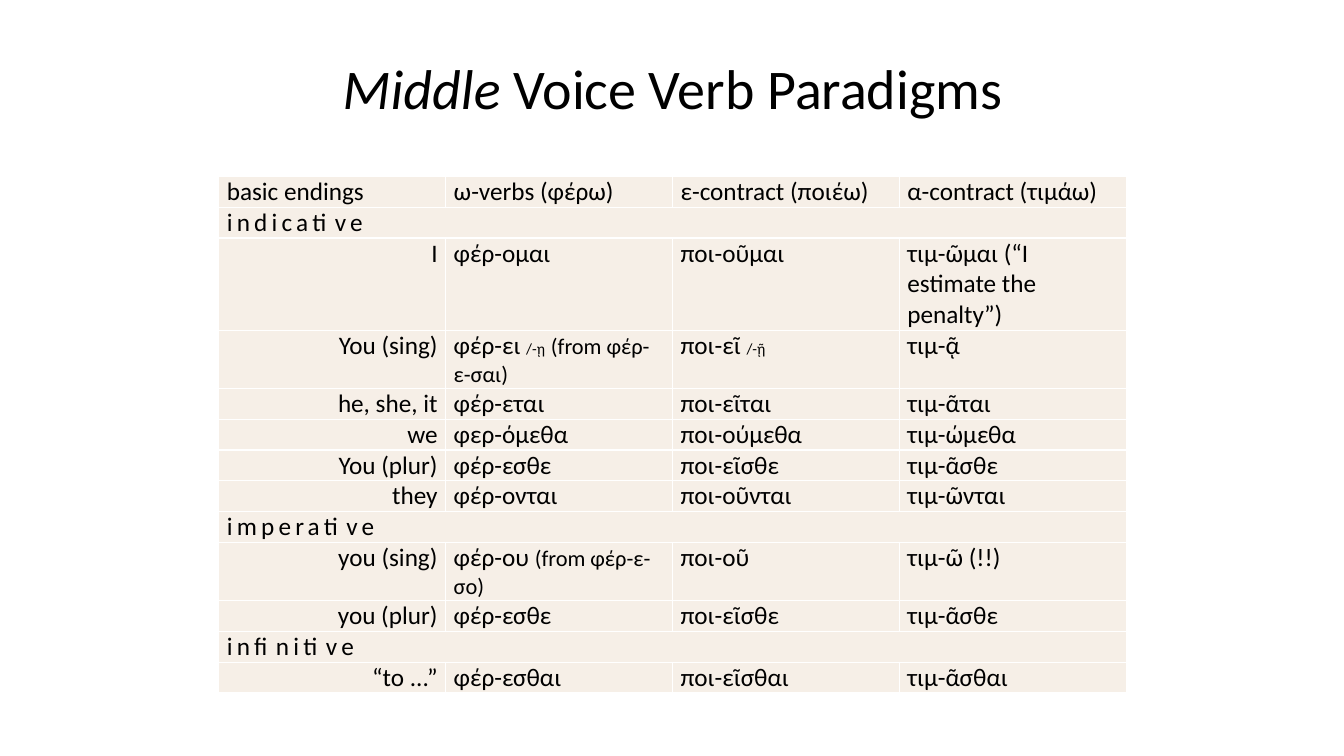
"""Build a slide with a table of Greek middle voice verb paradigms."""
from pptx import Presentation
from pptx.dml.color import RGBColor
from pptx.enum.text import MSO_ANCHOR, MSO_AUTO_SIZE, PP_ALIGN
from pptx.util import Inches, Pt

HUES = {"ink": "000000", "cell": "F6EFE7"}
FONT = "Calibri"
ROWS = [
    ["basic endings", "ω-verbs (φέρω)", "ε-contract (ποιέω)", "α-contract (τιμάω)"],
    ["indicative"],
    ["I", "φέρ-ομαι", "ποι-οῦμαι", "τιμ-ῶμαι (“I estimate the penalty”)"],
    ["You (sing)",
     [("φέρ-ει ", 18), ("/-ῃ", 11), (" ", 18), ("(from φέρ-ε-σαι)", 16)],
     [("ποι-εῖ ", 18), ("/-ῇ", 11)], "τιμ-ᾷ"],
    ["he, she, it", "φέρ-εται", "ποι-εῖται", "τιμ-ᾶται"],
    ["we", "φερ-όμεθα", "ποι-ούμεθα", "τιμ-ώμεθα"],
    ["You (plur)", "φέρ-εσθε", "ποι-εῖσθε", "τιμ-ᾶσθε"],
    ["they", "φέρ-ονται", "ποι-οῦνται", "τιμ-ῶνται"],
    ["imperative"],
    ["you (sing)", [("φέρ-ου ", 18), ("(from φέρ-ε-σο)", 16)], "ποι-οῦ", "τιμ-ῶ (!!)"],
    ["you (plur)", "φέρ-εσθε", "ποι-εῖσθε", "τιμ-ᾶσθε"],
    ["infinitive"],
    ["“to ...”", "φέρ-εσθαι", "ποι-εῖσθαι", "τιμ-ᾶσθαι"],
]
COLS = len(ROWS[0])


def add_run(para, text, size, italic=False):
    run = para.add_run()
    run.text = text
    look = {"name": FONT, "size": Pt(size), "italic": italic}
    for key, value in look.items():
        setattr(run.font, key, value)
    run.font.color.rgb = RGBColor.from_string(HUES["ink"])
    return run


deck = Presentation()
deck.slide_width, deck.slide_height = Inches(13.33), Inches(7.5)
slide = deck.slides.add_slide(deck.slide_layouts.get_by_name("Title Only"))

title = slide.shapes.title
place = {"left": 0.67, "top": 0.08, "width": 12, "height": 1.17}
for key, value in place.items():
    setattr(title, key, Inches(value))
frame = title.text_frame
frame.auto_size = MSO_AUTO_SIZE.NONE
frame.vertical_anchor = MSO_ANCHOR.BOTTOM
head = frame.paragraphs[0]
head.alignment = PP_ALIGN.CENTER
add_run(head, "Middle", 40, True)
add_run(head, " Voice Verb Paradigms", 40)

table = slide.shapes.add_table(
    len(ROWS), COLS, Inches(2.17), Inches(1.75), Inches(9), Inches(5.03)).table
table.first_row = table.horz_banding = False
pads = {"margin_left": 0.08, "margin_right": 0.08, "margin_top": 0, "margin_bottom": 0}
for cell in table.iter_cells():
    for key, value in pads.items():
        setattr(cell, key, Inches(value))
    cell.fill.solid()
    cell.fill.fore_color.rgb = RGBColor.from_string(HUES["cell"])

for r, row in enumerate(ROWS):
    table.rows[r].height = 0
    mood = len(row) == 1
    if mood:
        table.cell(r, 0).merge(table.cell(r, COLS - 1))
    for c, entry in enumerate(row):
        para = table.cell(r, c).text_frame.paragraphs[0]
        if r and c == 0 and not mood:
            para.alignment = PP_ALIGN.RIGHT
        parts = [(entry, 18)] if isinstance(entry, str) else entry
        for text, size in parts:
            run = add_run(para, text, size)
            if mood:
                run.font._element.set("spc", "300")

deck.save("out.pptx")
